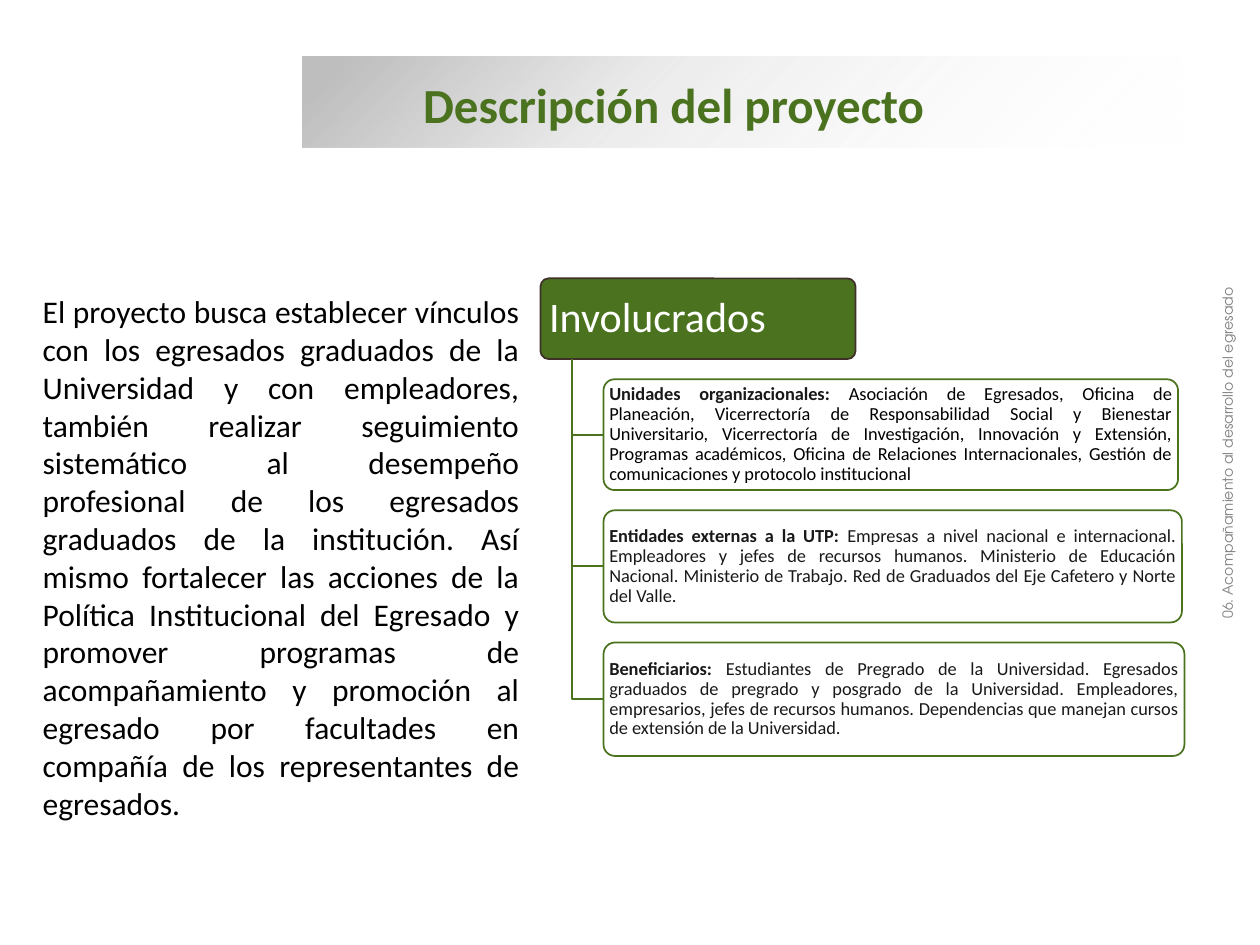
from lxml import etree
from pptx import Presentation
from pptx.dml.color import RGBColor
from pptx.enum.shapes import MSO_SHAPE
from pptx.enum.text import MSO_ANCHOR, MSO_AUTO_SIZE, PP_ALIGN
from pptx.oxml.ns import qn
from pptx.util import Inches, Pt

GREEN = RGBColor(0x4B, 0x73, 0x1F)
BROWN = RGBColor(0x3F, 0x30, 0x29)
SILVER = RGBColor(0xBF, 0xBF, 0xBF)
GRAY = RGBColor(0x80, 0x80, 0x80)
INK = RGBColor(0x19, 0x19, 0x19)
BLACK = RGBColor(0, 0, 0)
WHITE = RGBColor(0xFF, 0xFF, 0xFF)
ROUND, RECT = MSO_SHAPE.ROUNDED_RECTANGLE, MSO_SHAPE.RECTANGLE
LEFT, CENTER, JUSTIFY = PP_ALIGN.LEFT, PP_ALIGN.CENTER, PP_ALIGN.JUSTIFY
MIDDLE = MSO_ANCHOR.MIDDLE
GROW = MSO_AUTO_SIZE.SHAPE_TO_FIT_TEXT

BODY = (
    "El proyecto busca establecer vínculos con los egresados graduados de la "
    "Universidad y con empleadores, también realizar seguimiento sistemático al "
    "desempeño profesional de los egresados graduados de la institución. Así mismo "
    "fortalecer las acciones de la Política Institucional del Egresado y promover "
    "programas de acompañamiento y promoción al egresado por facultades en compañía "
    "de los representantes de egresados."
)
# width, height, label, text, text colour
CARDS = [
    (4.56, 0.88, "Unidades organizacionales: ",
     "Asociación de Egresados, Oficina de Planeación, Vicerrectoría de "
     "Responsabilidad Social y Bienestar Universitario, Vicerrectoría de "
     "Investigación, Innovación y Extensión, Programas académicos, Oficina de "
     "Relaciones Internacionales, Gestión de comunicaciones y protocolo "
     "institucional", BLACK),
    (4.59, 0.89, "Entidades externas a la UTP: ",
     "Empresas a nivel nacional e internacional. Empleadores y jefes de recursos "
     "humanos. Ministerio de Educación Nacional. Ministerio de Trabajo. Red de "
     "Graduados del Eje Cafetero y Norte del Valle.", INK),
    (4.61, 0.9, "Beneficiarios: ",
     "Estudiantes de Pregrado de la Universidad. Egresados graduados de pregrado y "
     "posgrado de la Universidad. Empleadores, empresarios, jefes de recursos "
     "humanos. Dependencias que manejan cursos de extensión de la Universidad.", INK),
]

prs = Presentation()
prs.slide_width, prs.slide_height = Inches(10), Inches(7.5)
slide = prs.slides.add_slide(prs.slide_layouts[6])
shapes = slide.shapes


def add_text(box, text, size, color, bold=False, align=LEFT, font="Calibri"):
    left, top, width, height = map(Inches, box)
    shape = shapes.add_textbox(left, top, width, height)
    frame = shape.text_frame
    frame.word_wrap = True
    frame.auto_size = GROW
    para = frame.paragraphs[0]
    para.text = text
    para.alignment = align
    para.font.name, para.font.size = font, Pt(size)
    para.font.bold, para.font.color.rgb = bold, color
    return shape


def add_node(box, fill, line, pad_x, pad_y, size, align):
    """Add a rounded box and return it with its empty first paragraph."""
    left, top, width, height = map(Inches, box)
    shape = shapes.add_shape(ROUND, left, top, width, height)
    shape.shadow.inherit = False
    shape.adjustments[0] = 0.1
    shape.fill.solid()
    shape.fill.fore_color.rgb = fill
    shape.line.color.rgb, shape.line.width = line, Pt(1)
    frame = shape.text_frame
    frame.word_wrap = True
    frame.vertical_anchor = MIDDLE
    frame.margin_left = frame.margin_right = Inches(pad_x)
    frame.margin_top = frame.margin_bottom = Inches(pad_y)
    para = frame.paragraphs[0]
    para.alignment, para.line_spacing = align, 0.9
    para.font.name, para.font.size = "Calibri", Pt(size)
    return shape, para


add_text((0.24, 2.27, 3.98, 4.34), BODY, 18, BLACK, align=JUSTIFY)

# Stakeholder tree
head, para = add_node((4.29, 2.21, 2.5, 0.64), GREEN, BROWN, 0.05, 0.03, 24, LEFT)
para.text = "Involucrados"
para.font.color.rgb = WHITE

trunk, edge, base = 4.54, 4.79, 2.85
top = 3.01
for width, height, label, text, color in CARDS:
    mid = top + height / 2
    path = shapes.build_freeform(Inches(trunk), Inches(base))
    path.add_line_segments(
        [(Inches(trunk), Inches(mid)), (Inches(edge), Inches(mid))], close=False)
    branch = path.convert_to_shape()
    branch.shadow.inherit = False
    branch.fill.background()
    branch.line.color.rgb, branch.line.width = GREEN, Pt(1)

    card, para = add_node((edge, top, width, height), WHITE, GREEN,
                          0.02, 0.02, 10.5, JUSTIFY)
    tint = card.fill._xPr.find(qn("a:solidFill"))[0]
    etree.SubElement(tint, qn("a:alpha"), val="90000")
    for words, bold, ink in ((label, True, INK), (text, False, color)):
        run = para.add_run()
        run.text = words
        run.font.bold, run.font.color.rgb = bold, ink
    top += height + 0.16

# Title band
band = shapes.add_shape(RECT, Inches(2.4), Inches(0.45), Inches(6.98), Inches(0.72))
band.shadow.inherit = False
band.line.fill.background()
band.fill.gradient()
grad = band.fill._xPr.find(qn("a:gradFill"))
stops = grad.find(qn("a:gsLst"))
for stop in list(stops):
    stops.remove(stop)
for place, color, alpha in ((5, SILVER, 100), (37, SILVER, 31), (100, WHITE, 0)):
    stop = etree.SubElement(stops, qn("a:gs"), pos=str(place * 1000))
    tint = etree.SubElement(stop, qn("a:srgbClr"), val=str(color))
    etree.SubElement(tint, qn("a:alpha"), val=str(alpha * 1000))
slant = grad.find(qn("a:lin"))
slant.set("ang", str(45 * 60000))
slant.set("scaled", "0")

title = add_text((3.26, 0.54, 6.2, 0.57), "Descripción del proyecto", 28, GREEN, bold=True)
title.text_frame.vertical_anchor = MIDDLE

side = add_text((7.39, 3.41, 4.84, 0.37), "06. Acompañamiento al desarrollo del egresado",
                8, GRAY, align=CENTER, font="TeX Gyre Adventor")
side.rotation = 270

prs.save("out.pptx")
